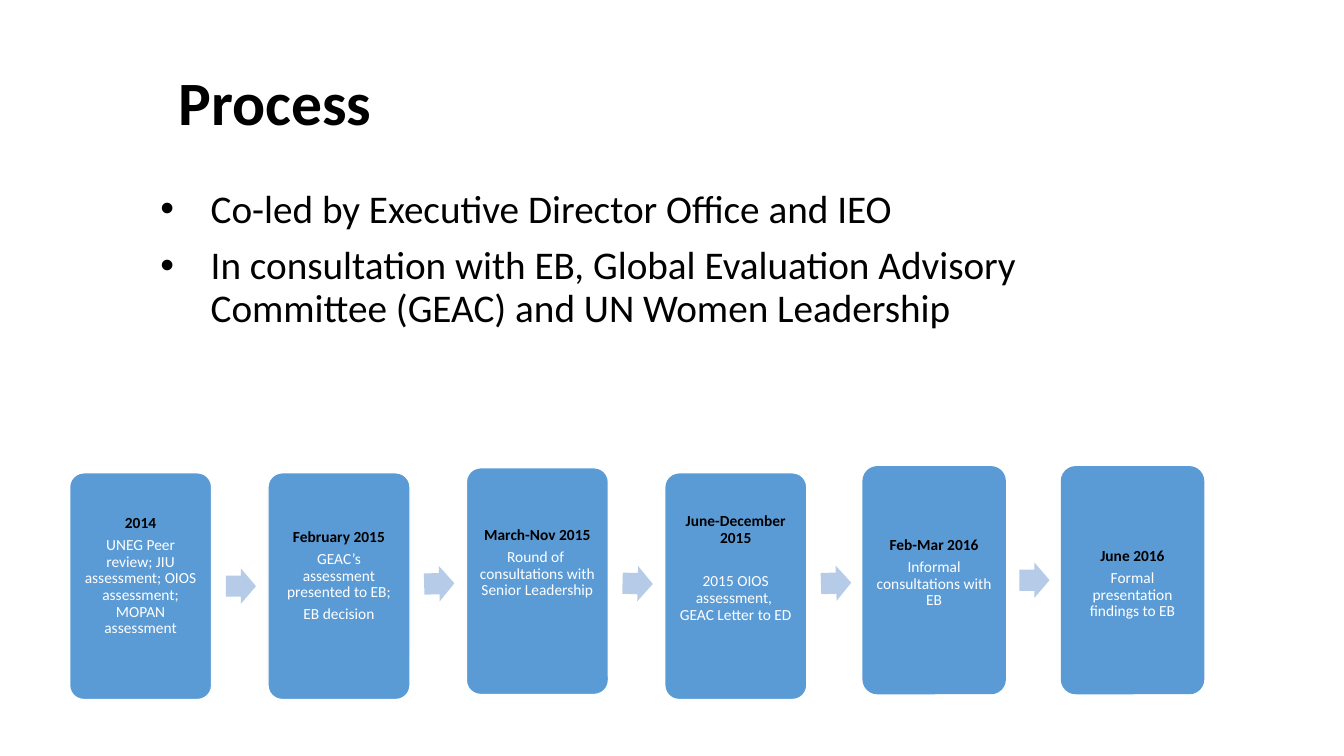
from dataclasses import dataclass
from math import atan2, degrees

from pptx import Presentation
from pptx.dml.color import RGBColor
from pptx.enum.shapes import MSO_SHAPE
from pptx.enum.text import MSO_ANCHOR, MSO_AUTO_SIZE, PP_ALIGN
from pptx.util import Pt

BLACK = RGBColor(0x00, 0x00, 0x00)
WHITE = RGBColor(0xFF, 0xFF, 0xFF)
BLUE = RGBColor(0x5B, 0x9B, 0xD5)
PALE = RGBColor(0xB5, 0xCB, 0xE7)
FONT = "Calibri"

# Timeline grid, in points
LEFT, PITCH = 49.7, 141.7
WIDTH, HEIGHT = 101.5, 162
ARROW_X, ARROW_W, ARROW_H = 111.6, 21.6, 25.2


@dataclass
class Stage:
    date: str
    notes: list[str]
    top: float
    lead: float  # space above the date
    gap: float = 3.8  # space below the date
    edge: RGBColor = WHITE


STAGES = [
    Stage("2014", ["UNEG Peer review; JIU assessment; OIOS assessment; MOPAN assessment"],
          337.7, 27.4),
    Stage("February 2015", ["GEAC’s assessment presented to EB;", "EB decision"],
          337.7, 37.4),
    Stage("March-Nov 2015", ["Round of  consultations with Senior Leadership"],
          334.1, 39.6),
    Stage("June-December 2015", ["2015 OIOS assessment,  GEAC Letter to ED"],
          337.7, 26, gap=19.3),
    Stage("Feb-Mar 2016", ["Informal consultations with EB"],
          333.4, 47.4, edge=BLUE),
    Stage("June 2016", ["Formal presentation findings to EB"],
          333.4, 55.3, edge=BLUE),
]
POINTS = [
    "Co-led by Executive Director Office and IEO",
    "In consultation with EB, Global Evaluation Advisory Committee (GEAC) and UN Women Leadership",
]


def style(para, size: float, color: RGBColor, bold: bool = False) -> None:
    for run in para.runs:
        run.font.name = FONT
        run.font.size = Pt(size)
        run.font.bold = bold
        run.font.color.rgb = color


def place(shape, left: float, top: float, width: float, height: float) -> None:
    shape.left, shape.top = Pt(left), Pt(top)
    shape.width, shape.height = Pt(width), Pt(height)


def add_block(slide, kind, left: float, top: float, width: float, height: float,
              fill: RGBColor):
    shape = slide.shapes.add_shape(kind, Pt(left), Pt(top), Pt(width), Pt(height))
    shape.shadow.inherit = False
    shape.fill.solid()
    shape.fill.fore_color.rgb = fill
    return shape


def add_card(slide, stage: Stage, left: float) -> None:
    card = add_block(slide, MSO_SHAPE.ROUNDED_RECTANGLE, left, stage.top,
                     WIDTH, HEIGHT, BLUE)
    card.adjustments[0] = 0.1
    card.line.color.rgb = stage.edge
    card.line.width = Pt(1)
    frame = card.text_frame
    frame.word_wrap = True
    frame.vertical_anchor = MSO_ANCHOR.TOP
    frame.margin_left = frame.margin_right = Pt(6.5)
    frame.margin_top, frame.margin_bottom = Pt(stage.lead), Pt(6.5)
    frame.text = "\n".join([stage.date, *stage.notes])
    for i, para in enumerate(frame.paragraphs):
        para.alignment = PP_ALIGN.CENTER
        para.line_spacing = 0.9
        para.space_after = Pt(3.8 if i else stage.gap)
        style(para, 11, WHITE if i else BLACK, bold=not i)


def add_arrow(slide, now: Stage, then: Stage, left: float) -> None:
    """Centre the arrow between two cards and tilt it along their offset."""
    top = (now.top + then.top + HEIGHT - ARROW_H) / 2
    arrow = add_block(slide, MSO_SHAPE.RIGHT_ARROW, left, top, ARROW_W, ARROW_H, PALE)
    arrow.line.fill.background()
    arrow.adjustments[0], arrow.adjustments[1] = 0.6, 0.5
    arrow.rotation = degrees(atan2(then.top - now.top, PITCH))


def fill_title(title) -> None:
    place(title, 120.2, 41.8, 179.3, 60.5)
    frame = title.text_frame
    frame.text = "Process"
    frame.auto_size = MSO_AUTO_SIZE.NONE
    frame.vertical_anchor = MSO_ANCHOR.MIDDLE
    frame.paragraphs[0].alignment = PP_ALIGN.LEFT
    style(frame.paragraphs[0], 44, BLACK, bold=True)


def fill_list(body) -> None:
    place(body, 107.3, 131.8, 733, 109.4)
    frame = body.text_frame
    frame.text = "\n".join(POINTS)
    frame.auto_size = MSO_AUTO_SIZE.NONE
    for para in frame.paragraphs:
        para.line_spacing = 0.9
        para.space_before = Pt(10)
        style(para, 28, BLACK)
        # Hanging indent for the bullet
        props = para._p.get_or_add_pPr()
        props.set("marL", str(Pt(36)))
        props.set("indent", str(Pt(-36)))


def main() -> None:
    deck = Presentation()
    deck.slide_width, deck.slide_height = Pt(960), Pt(540)
    slide = deck.slides.add_slide(deck.slide_layouts[1])

    # Title and list
    fill_title(slide.shapes.title)
    fill_list(slide.placeholders[1])

    # Timeline
    for i, stage in enumerate(STAGES):
        add_card(slide, stage, LEFT + i * PITCH)
    for i, (now, then) in enumerate(zip(STAGES, STAGES[1:])):
        add_arrow(slide, now, then, LEFT + ARROW_X + i * PITCH)

    deck.save("out.pptx")


if __name__ == "__main__":
    main()
